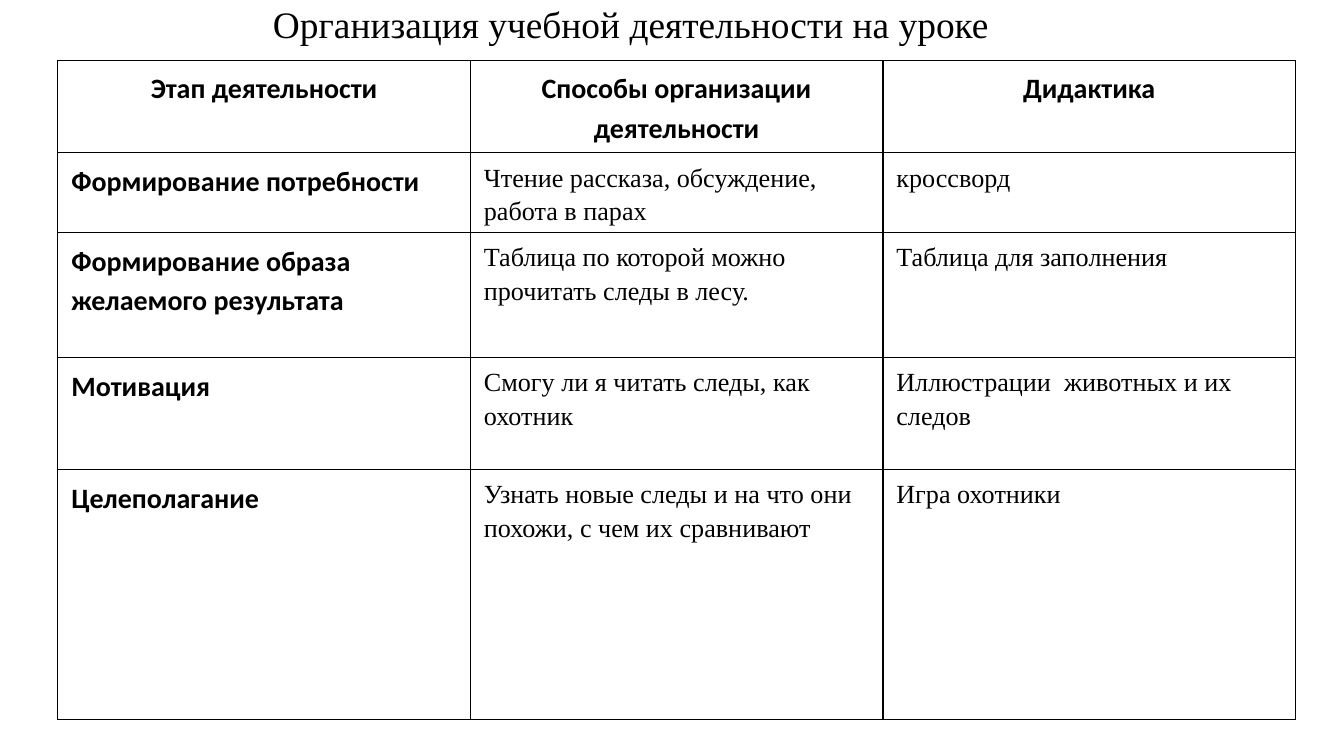
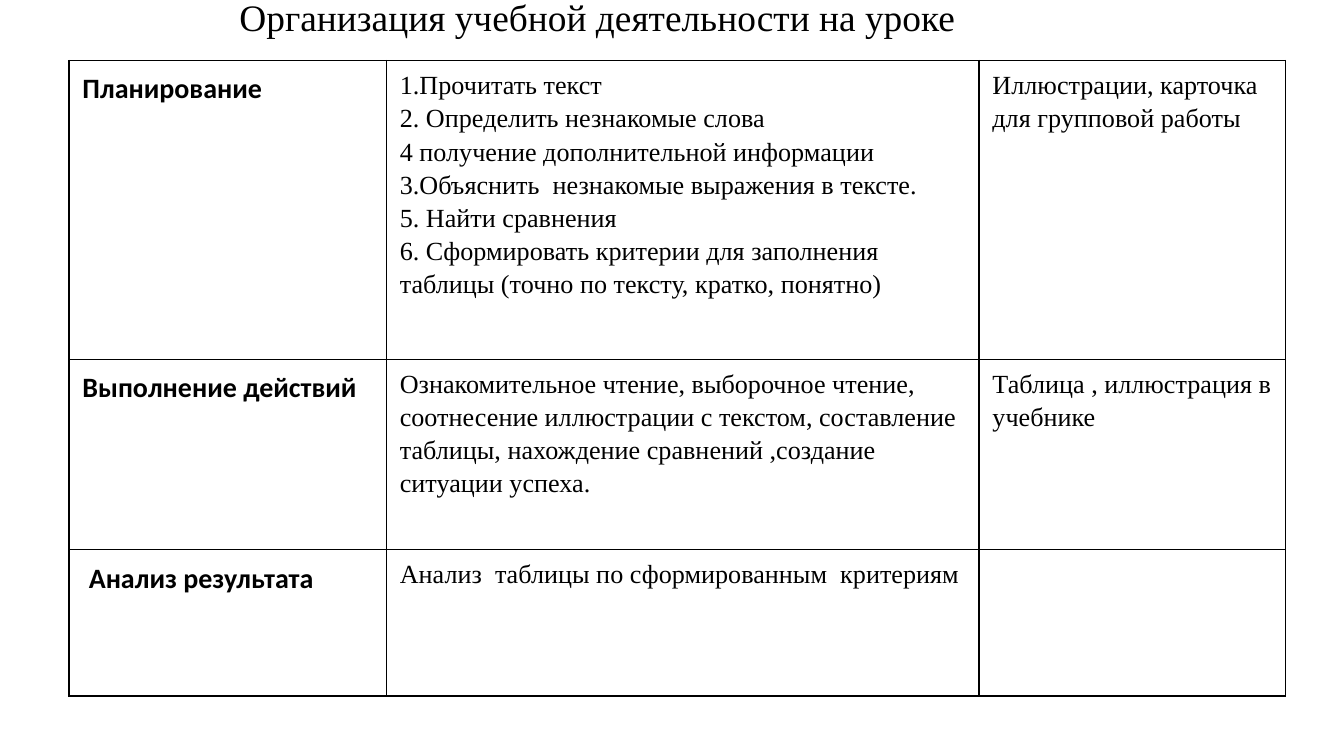
from dataclasses import dataclass

from lxml.etree import SubElement
from pptx import Presentation
from pptx.dml.color import RGBColor
from pptx.enum.text import MSO_ANCHOR, MSO_AUTO_SIZE, PP_ALIGN
from pptx.oxml.ns import qn
from pptx.slide import Slide
from pptx.table import _Cell
from pptx.util import Pt


@dataclass(frozen=True)
class Style:
    font: str
    size: float
    bold: bool = False
    space: float = 1.15


@dataclass(frozen=True)
class Theme:
    ink: str = "000000"
    rule: float = 0.75
    title: Style = Style("Times New Roman", 20, space=1.0)
    label: Style = Style("Calibri", 15, bold=True)
    body: Style = Style("Times New Roman", 14)


@dataclass(frozen=True)
class Page:
    """Places and sizes in points; a line break in a cell starts a paragraph."""
    title: tuple[float, float]
    grid: tuple[float, float]
    cols: list[float]
    rows: list[float]
    cells: list[list[str]]
    header: bool = False


THEME = Theme()
TITLE = "Организация учебной деятельности на уроке"
TITLE_SIZE = 403, 52.5

PAGES = [
    Page(
        title=(139, -3), grid=(31, 32.4),
        cols=[221] * 3, rows=[47.5, 42, 67, 60, 134], header=True,
        cells=[
            ["Этап деятельности", "Способы организации деятельности", "Дидактика"],
            ["Формирование потребности",
             "Чтение рассказа, обсуждение, работа в парах",
             "кроссворд"],
            ["Формирование образа желаемого результата",
             "Таблица по которой можно прочитать следы в лесу.",
             "Таблица для заполнения"],
            ["Мотивация",
             "Смогу ли я читать следы, как охотник",
             "Иллюстрации  животных и их следов"],
            ["Целеполагание",
             "Узнать новые следы и на что они похожи, с чем их сравнивают",
             "Игра охотники"],
        ],
    ),
    Page(
        title=(121, -6.5), grid=(37, 32.4),
        cols=[170, 317.5, 164], rows=[160, 102, 78.5],
        cells=[
            ["Планирование",
             "1.Прочитать текст\n"
             "2. Определить незнакомые слова\n"
             "4 получение дополнительной информации "
             "3.Объяснить  незнакомые выражения в тексте.\n"
             "5. Найти сравнения\n"
             "6. Сформировать критерии для заполнения таблицы "
             "(точно по тексту, кратко, понятно)",
             "Иллюстрации, карточка для групповой работы"],
            ["Выполнение действий",
             "Ознакомительное чтение, выборочное чтение, соотнесение "
             "иллюстрации с текстом, составление таблицы, нахождение "
             "сравнений ,создание ситуации успеха.",
             "Таблица , иллюстрация в учебнике"],
            [" Анализ результата",
             "Анализ  таблицы по сформированным  критериям",
             ""],
        ],
    ),
]


def write(frame, text: str, style: Style, align=PP_ALIGN.LEFT) -> None:
    frame.text = text
    for para in frame.paragraphs:
        para.alignment = align
        para.line_spacing = style.space
        font = para.font
        font.name, font.size, font.bold = style.font, Pt(style.size), style.bold
        font.color.rgb = RGBColor.from_string(THEME.ink)


def frame_cell(cell: _Cell) -> None:
    """Rule all four sides; the fill must follow the lines in the XML."""
    props = cell._tc.get_or_add_tcPr()
    for side in ("lnL", "lnR", "lnT", "lnB"):
        line = SubElement(props, qn(f"a:{side}"), w=str(Pt(THEME.rule)))
        fill = SubElement(line, qn("a:solidFill"))
        SubElement(fill, qn("a:srgbClr"), val=THEME.ink)
    cell.fill.background()


def add_title(slide: Slide, page: Page) -> None:
    title = slide.shapes.title
    title.left, title.top = map(Pt, page.title)
    title.width, title.height = map(Pt, TITLE_SIZE)
    frame = title.text_frame
    frame.auto_size = MSO_AUTO_SIZE.NONE
    frame.vertical_anchor = MSO_ANCHOR.TOP
    write(frame, TITLE, THEME.title)


def add_grid(slide: Slide, page: Page) -> None:
    table = slide.shapes.add_table(
        len(page.rows), len(page.cols), *map(Pt, page.grid),
        Pt(sum(page.cols)), Pt(sum(page.rows))).table
    table.first_row = page.header
    table.horz_banding = False
    for col, width in zip(table.columns, page.cols):
        col.width = Pt(width)
    for row, height in zip(table.rows, page.rows):
        row.height = Pt(height)
    for r, texts in enumerate(page.cells):
        for c, text in enumerate(texts):
            cell = table.cell(r, c)
            frame_cell(cell)
            head = page.header and r == 0
            write(cell.text_frame, text,
                  THEME.label if head or c == 0 else THEME.body,
                  PP_ALIGN.CENTER if head else PP_ALIGN.LEFT)


def main() -> None:
    deck = Presentation()
    deck.slide_width, deck.slide_height = Pt(720), Pt(405)
    for page in PAGES:
        slide = deck.slides.add_slide(deck.slide_layouts.get_by_name("Title Only"))
        add_grid(slide, page)
        add_title(slide, page)
    deck.save("out.pptx")


if __name__ == "__main__":
    main()
